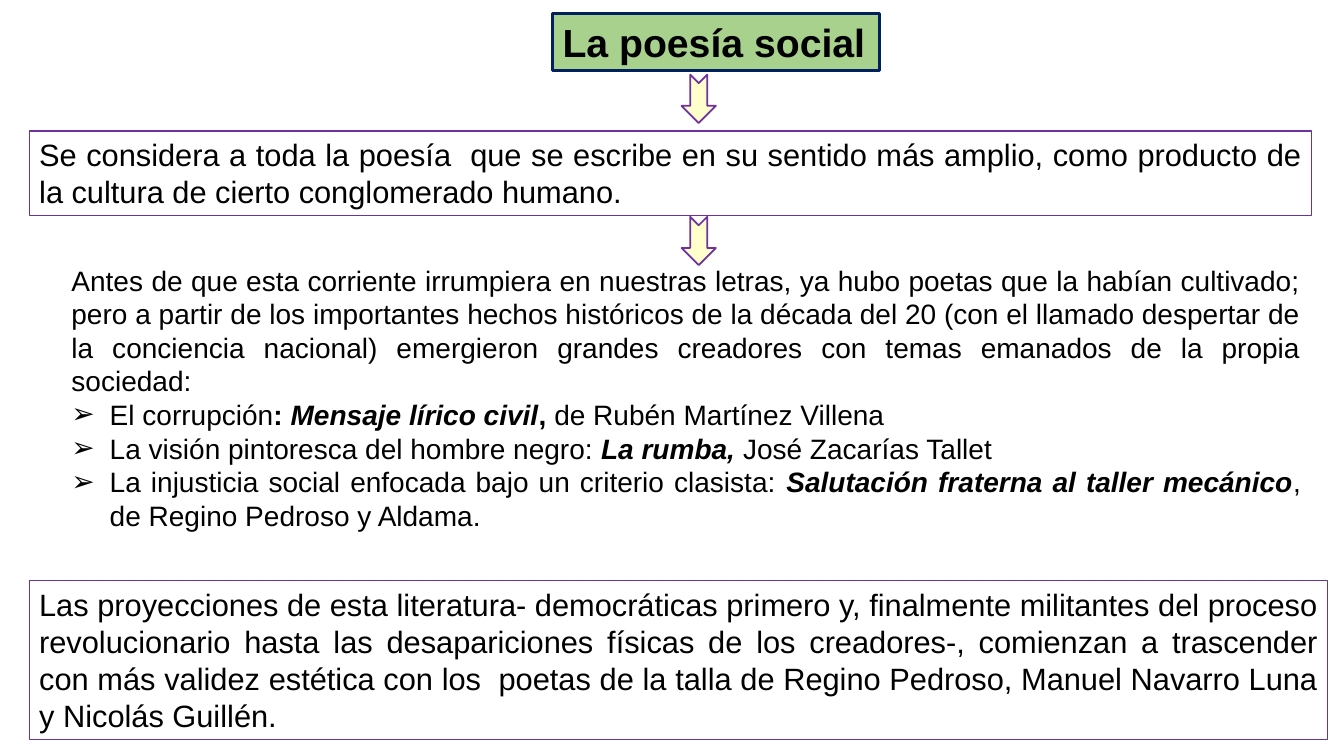
from lxml.etree import SubElement
from pptx import Presentation
from pptx.dml.color import RGBColor
from pptx.enum.shapes import MSO_SHAPE
from pptx.enum.text import MSO_ANCHOR, MSO_AUTO_SIZE, PP_ALIGN
from pptx.oxml.ns import qn
from pptx.util import Inches, Pt

COLORS = {"white": "FFFFFF", "text": "000000", "title": "A9D18E", "navy": "002060",
          "purple": "7030A0", "cream": "FFFFCC"}
FONT = "Arial"
BULLET_INDENT = 0.38

TITLE = "La poesía social"
DEFINITION = ("Se considera a toda la poesía  que se escribe en su sentido más amplio, "
              "como producto de la cultura de cierto conglomerado humano.")
HISTORY = ("Antes de que esta corriente irrumpiera en nuestras letras, ya hubo poetas que la "
           "habían cultivado; pero a partir de los importantes hechos históricos de la década "
           "del 20 (con el llamado despertar de la conciencia nacional) emergieron grandes "
           "creadores con temas emanados de la propia sociedad:")
# Each run is a text and its style: b for bold, i for italic
THEMES = [
    [("El corrupción", ""), (": ", "b"), ("Mensaje lírico civil", "bi"), (", ", "b"),
     ("de Rubén Martínez Villena", "")],
    [("La visión pintoresca del hombre negro: ", ""), ("La rumba, ", "bi"),
     ("José Zacarías Tallet", "")],
    [("La injusticia social enfocada bajo un criterio clasista: ", ""),
     ("Salutación fraterna al taller mecánico", "bi"), (", de Regino Pedroso y Aldama.", "")],
]
PROJECTION = ("Las proyecciones de esta literatura- democráticas primero y, finalmente militantes "
              "del proceso revolucionario hasta las desapariciones físicas de los creadores-, "
              "comienzan a trascender con más validez estética con los  poetas de la talla de "
              "Regino Pedroso, Manuel Navarro Luna y Nicolás Guillén.")


def rgb(name):
    return RGBColor.from_string(COLORS[name])


def place(sp, box):
    sp.left, sp.top, sp.width, sp.height = (Inches(v) for v in box)


def outline(sp, color, width):
    sp.line.color.rgb = rgb(color)
    sp.line.width = Pt(width)


def prepare(tf, anchor=MSO_ANCHOR.TOP):
    tf.word_wrap = True
    tf.auto_size = MSO_AUTO_SIZE.NONE
    tf.vertical_anchor = anchor


def write(p, runs, size):
    p.alignment = PP_ALIGN.JUSTIFY
    for text, style in runs:
        r = p.add_run()
        r.text = text
        r.font.name = FONT
        r.font.size = Pt(size)
        r.font.color.rgb = rgb("text")
        r.font.bold = "b" in style
        r.font.italic = "i" in style


def add_bullet(p):
    pPr = p._p.get_or_add_pPr()
    pPr.set("marL", str(Inches(BULLET_INDENT)))
    pPr.set("indent", str(-Inches(BULLET_INDENT)))
    SubElement(pPr, qn("a:buFont")).set("typeface", FONT)
    SubElement(pPr, qn("a:buChar")).set("char", "➢")


def add_title(s, box):
    sp = s.shapes.title
    place(sp, box)
    sp.fill.solid()
    sp.fill.fore_color.rgb = rgb("title")
    outline(sp, "navy", 2.25)
    prepare(sp.text_frame, MSO_ANCHOR.MIDDLE)
    write(sp.text_frame.paragraphs[0], [(TITLE, "b")], 28)


def add_framed_text(s, box, text):
    sp = s.shapes.add_shape(MSO_SHAPE.RECTANGLE, *(Inches(v) for v in box))
    sp.shadow.inherit = False
    sp.fill.background()
    outline(sp, "purple", 0.75)
    prepare(sp.text_frame)
    write(sp.text_frame.paragraphs[0], [(text, "")], 22)


def add_down_arrow(s, box):
    sp = s.shapes.add_shape(MSO_SHAPE.NOTCHED_RIGHT_ARROW, *(Inches(v) for v in box))
    sp.rotation = 90
    sp.shadow.inherit = False
    sp.fill.solid()
    sp.fill.fore_color.rgb = rgb("cream")
    outline(sp, "purple", 1.25)


def add_history(s, box):
    tf = s.shapes.add_textbox(*(Inches(v) for v in box)).text_frame
    prepare(tf)
    write(tf.paragraphs[0], [(HISTORY, "")], 20)
    for runs in THEMES:
        p = tf.add_paragraph()
        add_bullet(p)
        write(p, runs, 20)


def main():
    prs = Presentation()
    prs.slide_width, prs.slide_height = Inches(13.33), Inches(7.5)
    s = prs.slides.add_slide(prs.slide_layouts[5])
    s.background.fill.solid()
    s.background.fill.fore_color.rgb = rgb("white")

    add_title(s, (5.48, 0.13, 3.24, 0.57))
    add_history(s, (0.61, 2.56, 12.39, 2.79))
    add_framed_text(s, (0.29, 1.3, 12.72, 0.84), DEFINITION)
    for top in (0.81, 2.22):
        add_down_arrow(s, (6.69, top, 0.48, 0.34))
    add_framed_text(s, (0.29, 5.76, 12.88, 1.58), PROJECTION)

    prs.save("out.pptx")


if __name__ == "__main__":
    main()
